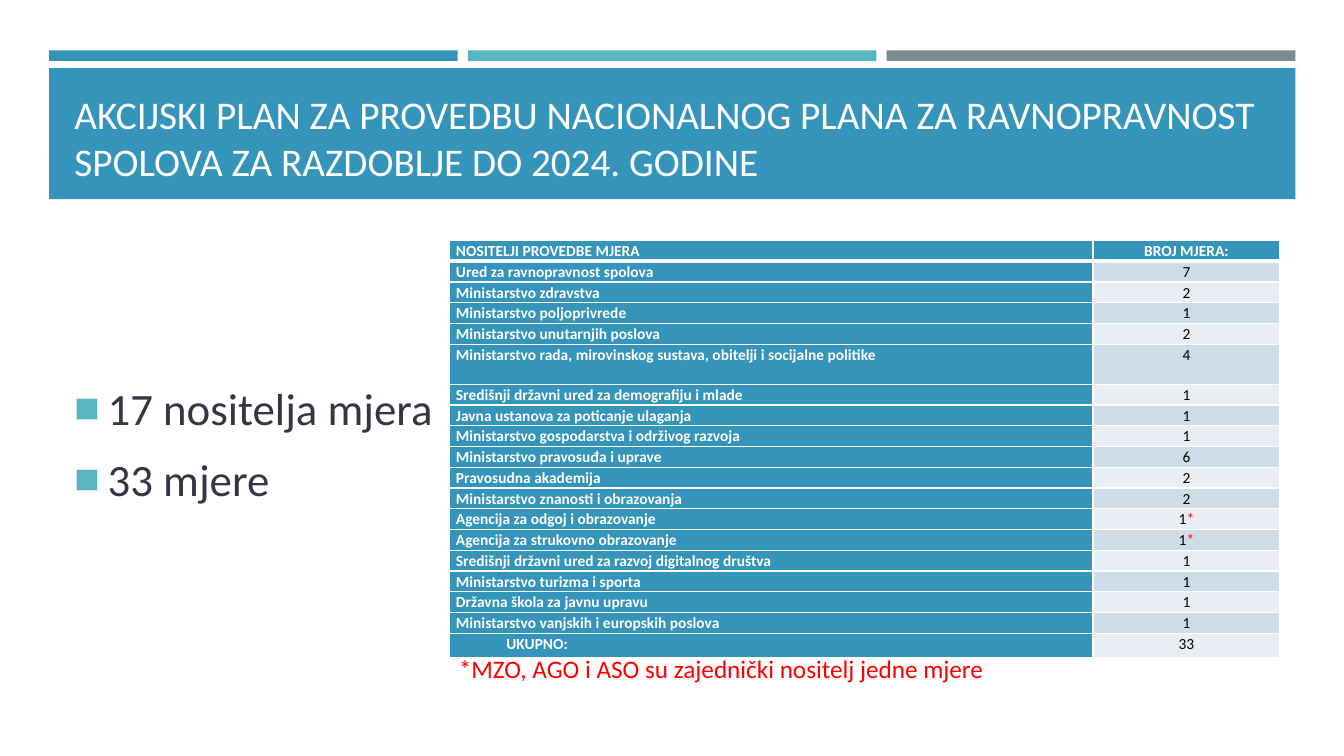
from dataclasses import dataclass
from typing import Any

import pptx
import pptx.dml.color
import pptx.enum.shapes
import pptx.enum.text
import pptx.oxml
import pptx.oxml.ns
import pptx.util

RGBColor = pptx.dml.color.RGBColor
Align = pptx.enum.text.PP_ALIGN
Anchor = pptx.enum.text.MSO_ANCHOR

BLUE = RGBColor(0x34, 0x94, 0xBA)
TEAL = RGBColor(0x58, 0xB6, 0xC0)
GREY = RGBColor(0x7A, 0x8C, 0x8E)
INK = RGBColor(0x37, 0x35, 0x45)
PALE = RGBColor(0xE8, 0xEE, 0xF3)
MIST = RGBColor(0xCE, 0xDC, 0xE7)
WHITE = RGBColor(0xFF, 0xFF, 0xFF)
BLACK = RGBColor(0x00, 0x00, 0x00)
RED = RGBColor(0xFF, 0x00, 0x00)

WIDTH, HEIGHT = pptx.util.Inches(13.33), pptx.util.Inches(7.5)
FONT = "Calibri"

# Grid of 100 columns by 100 rows
LEFT, SPAN = 3.65, 92.73
BAR_GAP = 0.75
TEXT_LEFT, TEXT_SPAN = 4.8, 90.45
CONTENT_TOP = 31.8
TABLE_LEFT = 33.4
TABLE_COLUMNS = (47.93, 13.9)
ROW, TALL_ROW, TOTAL_ROW = 2.75, 5.3, 3.25


@dataclass
class Area:
    column: float
    row: float
    columns: float
    rows: float

    def emu(self) -> tuple[int, int, int, int]:
        return (across(self.column), down(self.row),
                across(self.columns), down(self.rows))


@dataclass
class Carrier:
    name: str
    measures: str
    rows: float = ROW
    mark: str = ""


CARRIERS = [
    Carrier("Ured za ravnopravnost spolova", "7"),
    Carrier("Ministarstvo zdravstva", "2"),
    Carrier("Ministarstvo poljoprivrede", "1"),
    Carrier("Ministarstvo unutarnjih poslova", "2"),
    Carrier("Ministarstvo rada, mirovinskog sustava, obitelji i socijalne politike",
            "4", TALL_ROW),
    Carrier("Središnji državni ured za demografiju i mlade", "1"),
    Carrier("Javna ustanova za poticanje ulaganja", "1"),
    Carrier("Ministarstvo gospodarstva i održivog razvoja", "1"),
    Carrier("Ministarstvo pravosuđa i uprave", "6"),
    Carrier("Pravosudna akademija", "2"),
    Carrier("Ministarstvo znanosti i obrazovanja", "2"),
    Carrier("Agencija za odgoj i obrazovanje", "1", mark="*"),
    Carrier("Agencija za strukovno obrazovanje", "1", mark="*"),
    Carrier("Središnji državni ured za razvoj digitalnog društva", "1"),
    Carrier("Ministarstvo turizma i sporta", "1"),
    Carrier("Državna škola za javnu upravu", "1"),
    Carrier("Ministarstvo vanjskih i europskih poslova", "1"),
]
HEADING = Carrier("NOSITELJI PROVEDBE MJERA", "BROJ MJERA:")
TOTAL = Carrier("UKUPNO:", "33", TOTAL_ROW)


def across(columns: float) -> int:
    return round(WIDTH * columns / 100)


def down(rows: float) -> int:
    return round(HEIGHT * rows / 100)


def apply(target: Any, formats: dict[str, Any]) -> None:
    for attribute, value in formats.items():
        setattr(target, attribute, value)


def add_run(paragraph: Any, text: str, size: float, color: RGBColor,
            bold: bool = False) -> None:
    run = paragraph.add_run()
    run.text = text
    apply(run.font, {"name": FONT, "size": pptx.util.Pt(size), "bold": bold})
    run.font.color.rgb = color


def add_block(slide: Any, area: Area, color: RGBColor) -> None:
    block = slide.shapes.add_shape(
        pptx.enum.shapes.MSO_SHAPE.RECTANGLE, *area.emu())
    block.shadow.inherit = False
    block.fill.solid()
    block.fill.fore_color.rgb = color
    block.line.fill.background()


def add_texts(slide: Any, area: Area, texts: list[str], size: float, color: RGBColor,
              frame_formats: dict[str, Any], formats: dict[str, Any]) -> list[Any]:
    frame = slide.shapes.add_textbox(*area.emu()).text_frame
    apply(frame, {"word_wrap": True, **frame_formats})
    for index, text in enumerate(texts):
        paragraph = frame.add_paragraph() if index else frame.paragraphs[0]
        apply(paragraph, formats)
        add_run(paragraph, text, size, color)
    return list(frame.paragraphs)


def add_bullet(paragraph: Any) -> None:
    properties = paragraph._p.get_or_add_pPr()
    indent = pptx.util.Inches(0.33)
    properties.set("marL", str(indent))
    properties.set("indent", str(-indent))
    ns = pptx.oxml.ns.nsdecls("a")
    for xml in (f'<a:buClr {ns}><a:srgbClr val="{TEAL}"/></a:buClr>',
                f'<a:buSzPct {ns} val="60000"/>',
                f'<a:buFont {ns} typeface="{FONT}"/>',
                f'<a:buChar {ns} char="■"/>'):
        properties.append(pptx.oxml.parse_xml(xml))


def add_borders(cell: Any, widths: dict[str, float]) -> None:
    properties = cell._tc.get_or_add_tcPr()
    for index, (side, width) in enumerate(widths.items()):
        properties.insert(index, pptx.oxml.parse_xml(
            f'<a:ln{side} {pptx.oxml.ns.nsdecls("a")} w="{pptx.util.Pt(width)}">'
            f'<a:solidFill><a:srgbClr val="{WHITE}"/></a:solidFill></a:ln{side}>'))


def add_carrier_table(slide: Any) -> None:
    lines = [HEADING, *CARRIERS, TOTAL]
    area = Area(TABLE_LEFT, CONTENT_TOP, sum(TABLE_COLUMNS),
                sum(line.rows for line in lines))
    table = slide.shapes.add_table(len(lines), len(TABLE_COLUMNS), *area.emu()).table
    for column, columns in zip(table.columns, TABLE_COLUMNS):
        column.width = across(columns)
    side_margin = pptx.util.Inches(0.07)
    for number, line in enumerate(lines):
        table.rows[number].height = down(line.rows)
        for position, text in enumerate((line.name, line.measures)):
            strong = number == 0 or position == 0
            cell = table.cell(number, position)
            apply(cell, {"margin_left": side_margin, "margin_right": side_margin,
                         "margin_top": 0, "margin_bottom": 0})
            cell.fill.solid()
            cell.fill.fore_color.rgb = BLUE if strong else (PALE, MIST)[number % 2]
            add_borders(cell, {"L": 1, "R": 1, "T": 3 if number == 1 else 1,
                               "B": 3 if number == 0 else 1})
            paragraph = cell.text_frame.paragraphs[0]
            apply(paragraph, {"line_spacing": 1.07,
                              "alignment": Align.CENTER if position else Align.LEFT})
            add_run(paragraph, text, 11, WHITE if strong else BLACK, strong)
            if position and line.mark:
                add_run(paragraph, line.mark, 11, RED)
            if line is TOTAL and position == 0:
                paragraph._p.get_or_add_pPr().set("marL", str(pptx.util.Inches(0.5)))


def main() -> None:
    deck = pptx.Presentation()
    apply(deck, {"slide_width": WIDTH, "slide_height": HEIGHT})
    slide = deck.slides.add_slide(deck.slide_layouts[6])

    # Coloured bars and title band
    bar_colors = (BLUE, TEAL, GREY)
    bar = (SPAN - BAR_GAP * (len(bar_colors) - 1)) / len(bar_colors)
    for index, color in enumerate(bar_colors):
        add_block(slide, Area(LEFT + index * (bar + BAR_GAP), 6.67, bar, 1.4), color)
    add_block(slide, Area(LEFT, 9, SPAN, 17.35), BLUE)
    add_texts(slide, Area(TEXT_LEFT, 10.27, TEXT_SPAN, 14.8),
              ["AKCIJSKI PLAN ZA PROVEDBU NACIONALNOG PLANA ZA RAVNOPRAVNOST "
               "SPOLOVA ZA RAZDOBLJE DO 2024. GODINE"],
              28, WHITE, {"vertical_anchor": Anchor.BOTTOM}, {})

    # Key figures
    figures = add_texts(
        slide, Area(TEXT_LEFT, CONTENT_TOP, TEXT_SPAN, 53.6),
        ["17 nositelja mjera", "33 mjere"], 32, INK,
        {"vertical_anchor": Anchor.MIDDLE},
        {"space_before": pptx.util.Pt(6.4), "space_after": pptx.util.Pt(6)})
    for figure in figures:
        add_bullet(figure)

    # Carriers and footnote
    add_carrier_table(slide)
    add_texts(slide, Area(TABLE_LEFT, 85.47, 41.55, 5.47),
              ["*MZO, AGO i ASO su zajednički nositelj jedne mjere"], 18, RED,
              {"word_wrap": False},
              {"line_spacing": 1.07, "space_after": pptx.util.Pt(8)})

    deck.save("out.pptx")


if __name__ == "__main__":
    main()
